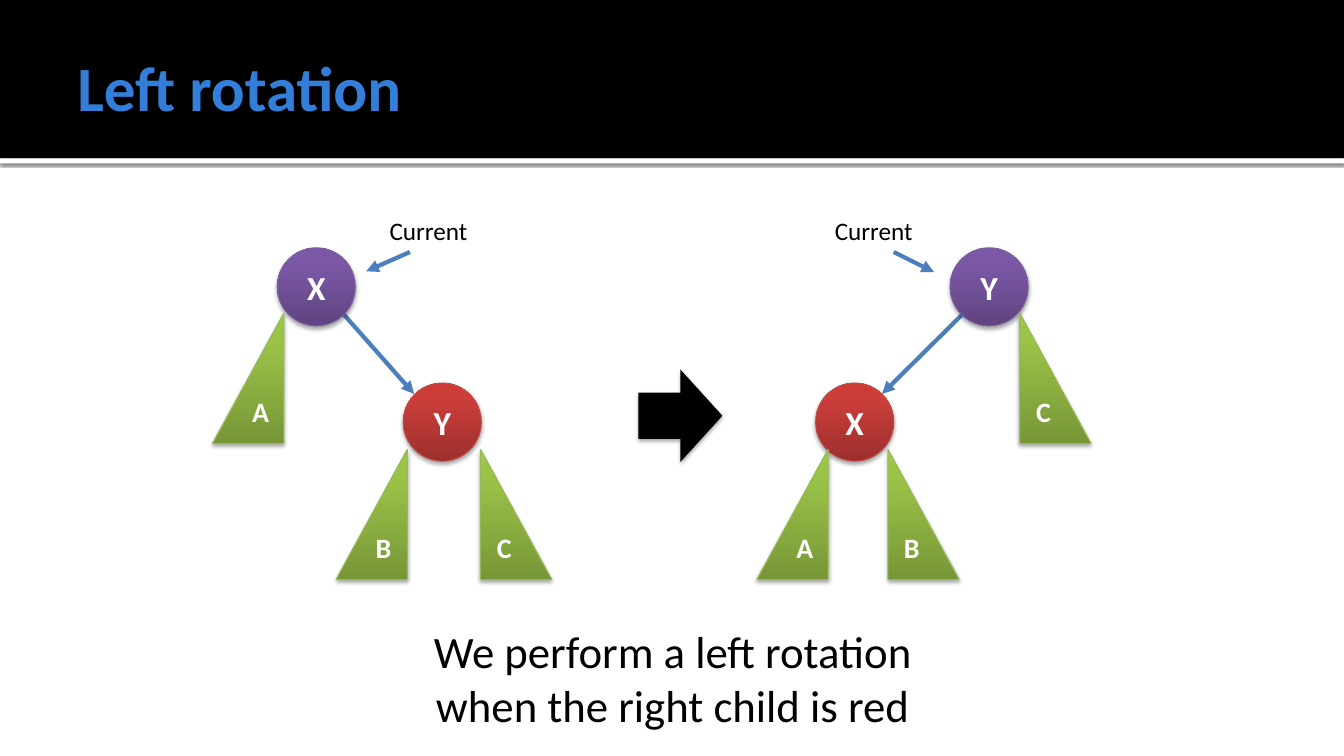
"""Build the slide that explains a left rotation of a red-black tree."""
from copy import deepcopy
from dataclasses import dataclass
from typing import Any, Optional

from lxml import etree
from pptx import Presentation
from pptx import util as u
from pptx.dml.color import RGBColor
from pptx.enum import shapes, text
from pptx.oxml.ns import qn

COLUMNS, ROWS = 160, 90
WIDTH, HEIGHT = u.Inches(40 / 3), u.Inches(7.5)
FONT = "Calibri"
BLACK = RGBColor(0x00, 0x00, 0x00)
WHITE = RGBColor(0xFF, 0xFF, 0xFF)
TITLE_BLUE = RGBColor(0x33, 0x7E, 0xD9)
LINK_BLUE = RGBColor(0x4B, 0x7E, 0xBC)
HEADER_HEIGHT, RULE_HEIGHT = 18.84, 0.6
UPPER_NODE, LOWER_NODE = 29.5, 45.6
UPPER_SUBTREE, LOWER_SUBTREE = 37.3, 53.5


@dataclass(frozen=True)
class Style:
    """Shape, size in grid units, gradient from bottom to top, outline and letter size."""
    preset: shapes.MSO_SHAPE
    width: float
    height: float
    stops: tuple[RGBColor, RGBColor, RGBColor]
    outline: RGBColor
    points: int


@dataclass(frozen=True)
class Member:
    """A lettered node or subtree of a tree."""
    letter: str
    column: float
    row: float
    style: Style
    flipped: bool = False


@dataclass(frozen=True)
class Link:
    """An arrow between two grid points."""
    start: tuple[float, float]
    end: tuple[float, float]


@dataclass(frozen=True)
class Tree:
    """A tree with its links and the column of its pointer label."""
    members: tuple[Member, ...]
    links: tuple[Link, ...]
    label_column: float


@dataclass(frozen=True)
class Shadow:
    """A black downward shadow with opacity in percent and lengths in points."""
    opacity: int
    blur: float
    distance: float


CURRENT = Style(shapes.MSO_SHAPE.OVAL, 9.3, 9.3,
                (RGBColor(0x5F, 0x44, 0x80), RGBColor(0x7B, 0x58, 0xA6), RGBColor(0x7C, 0x57, 0xA8)),
                RGBColor(0x7D, 0x60, 0xA0), 24)
RED = Style(shapes.MSO_SHAPE.OVAL, 9.3, 9.3,
            (RGBColor(0x9C, 0x2F, 0x2D), RGBColor(0xCB, 0x3E, 0x3A), RGBColor(0xCE, 0x3B, 0x37)),
            RGBColor(0xBF, 0x4C, 0x48), 24)
SUBTREE = Style(shapes.MSO_SHAPE.RIGHT_TRIANGLE, 8.5, 15.5,
                (RGBColor(0x77, 0x97, 0x37), RGBColor(0x9B, 0xC3, 0x48), RGBColor(0x9D, 0xC7, 0x46)),
                RGBColor(0x98, 0xB9, 0x55), 20)
SHAPE_SHADOW = Shadow(35, 3.1, 1.8)
RULE_SHADOW = Shadow(60, 2.5, 0.8)

TREES = (
    Tree((Member("Y", 48, LOWER_NODE, RED),
          Member("X", 33, UPPER_NODE, CURRENT),
          Member("B", 40, LOWER_SUBTREE, SUBTREE, True),
          Member("A", 25.3, UPPER_SUBTREE, SUBTREE, True),
          Member("C", 57.2, LOWER_SUBTREE, SUBTREE)),
         (Link((40.9, 37.4), (49.3, 46.9)), Link((48.8, 30), (43.6, 32.3))), 45.2),
    Tree((Member("Y", 113.1, UPPER_NODE, CURRENT),
          Member("X", 97.1, LOWER_NODE, RED),
          Member("B", 105.7, LOWER_SUBTREE, SUBTREE),
          Member("A", 90.1, LOWER_SUBTREE, SUBTREE, True),
          Member("C", 121.4, UPPER_SUBTREE, SUBTREE)),
         (Link((114.6, 37.4), (105, 46.9)), Link((106.4, 30), (111.2, 32.4))), 98.2),
)


def across(columns: float) -> int:
    """Return the length of a number of columns."""
    return round(WIDTH * columns / COLUMNS)


def down(rows: float) -> int:
    """Return the length of a number of rows."""
    return round(HEIGHT * rows / ROWS)


def box(column: float, row: float, columns: float, rows: float) -> tuple[int, int, int, int]:
    """Return left, top, width and height of a grid area."""
    return across(column), down(row), across(columns), down(rows)


def write(frame: Any, words: str, points: int, color: RGBColor, bold: bool = False,
          alignment: text.PP_ALIGN = text.PP_ALIGN.LEFT) -> None:
    """Fill a text frame with one formatted paragraph."""
    frame.text = words
    frame.word_wrap = True
    paragraph = frame.paragraphs[0]
    paragraph.alignment = alignment
    font = paragraph.runs[0].font
    font.name, font.size, font.bold = FONT, u.Pt(points), bold
    font.color.rgb = color


def add_shadow(shape: Any, shadow: Optional[Shadow]) -> None:
    """Replace the theme shadow of a shape."""
    shape.shadow.inherit = False
    if shadow:
        effects = shape.element.spPr.find(qn("a:effectLst"))
        outer = etree.SubElement(effects, qn("a:outerShdw"), blurRad=str(u.Pt(shadow.blur)),
                                 dist=str(u.Pt(shadow.distance)), dir="5400000", rotWithShape="0")
        color = etree.SubElement(outer, qn("a:srgbClr"), val=str(BLACK))
        etree.SubElement(color, qn("a:alpha"), val=str(shadow.opacity * 1000))


def add_solid(collection: Any, preset: shapes.MSO_SHAPE, area: tuple[int, int, int, int],
              color: RGBColor, shadow: Optional[Shadow] = None) -> None:
    """Draw a plain shape without outline."""
    shape = collection.add_shape(preset, *area)
    shape.fill.solid()
    shape.fill.fore_color.rgb = color
    shape.line.fill.background()
    add_shadow(shape, shadow)


def add_member(collection: Any, member: Member) -> None:
    """Draw a node or subtree with its letter."""
    style = member.style
    shape = collection.add_shape(style.preset, *box(member.column, member.row, style.width, style.height))
    shape.fill.gradient()
    shape.fill.gradient_angle = 90
    stop_list = shape.element.spPr.find(".//" + qn("a:gsLst"))
    stop_list.append(deepcopy(stop_list[-1]))
    for stop, position, color in zip(shape.fill.gradient_stops, (0, 0.8, 1), style.stops):
        stop.position = position
        stop.color.rgb = color
    shape.line.color.rgb = style.outline
    shape.line.width = u.Pt(0.75)
    add_shadow(shape, SHAPE_SHADOW)
    if member.flipped:
        shape.element.spPr.find(qn("a:xfrm")).set("flipH", "1")
    shape.text_frame.vertical_anchor = text.MSO_ANCHOR.MIDDLE
    write(shape.text_frame, member.letter, style.points, WHITE, True, text.PP_ALIGN.CENTER)


def add_link(collection: Any, link: Link) -> None:
    """Draw an arrow."""
    connector = collection.add_connector(
        shapes.MSO_CONNECTOR.STRAIGHT, across(link.start[0]), down(link.start[1]),
        across(link.end[0]), down(link.end[1]))
    connector.line.color.rgb = LINK_BLUE
    connector.line.width = u.Pt(3)
    properties = connector.element.spPr
    etree.SubElement(properties.find(qn("a:ln")), qn("a:tailEnd"), type="triangle")
    etree.SubElement(properties, qn("a:effectLst"))


def add_tree(slide: Any, tree: Tree) -> None:
    """Draw a tree as one group."""
    collection = slide.shapes.add_group_shape().shapes
    for link in tree.links:
        add_link(collection, link)
    for member in tree.members:
        add_member(collection, member)
    label = collection.add_textbox(*box(tree.label_column, 25.1, 34.8, 4.8))
    write(label.text_frame, "Current", 18, BLACK)


def add_header(slide: Any) -> None:
    """Draw the header band and set the title on it."""
    rectangle = shapes.MSO_SHAPE.RECTANGLE
    add_solid(slide.shapes, rectangle, box(0, HEADER_HEIGHT, COLUMNS, RULE_HEIGHT), WHITE, RULE_SHADOW)
    add_solid(slide.shapes, rectangle, box(0, 0, COLUMNS, HEADER_HEIGHT), BLACK)
    title = slide.shapes.title
    slide.shapes.element.append(title.element)
    title.left, title.top, title.width, title.height = box(8, 2, 144, 16.5)
    frame = title.text_frame
    frame.auto_size = text.MSO_AUTO_SIZE.NONE
    frame.vertical_anchor = text.MSO_ANCHOR.MIDDLE
    frame.margin_left = u.Inches(0.1)
    frame.margin_right = frame.margin_top = frame.margin_bottom = u.Inches(0.05)
    write(frame, "Left rotation", 45, TITLE_BLUE, True)


def main() -> None:
    """Build and save the presentation."""
    presentation = Presentation()
    presentation.slide_width, presentation.slide_height = WIDTH, HEIGHT
    slide = presentation.slides.add_slide(presentation.slide_layouts[5])
    add_header(slide)
    add_solid(slide.shapes, shapes.MSO_SHAPE.RIGHT_ARROW, box(76, 44, 10, 11), BLACK, SHAPE_SHADOW)
    caption = slide.shapes.add_textbox(*box(47.2, 73.7, 65.8, 14.2))
    write(caption.text_frame, "We perform a left rotation when the right child is red", 32, BLACK,
          alignment=text.PP_ALIGN.CENTER)
    for tree in TREES:
        add_tree(slide, tree)
    presentation.save("out.pptx")


if __name__ == "__main__":
    main()
